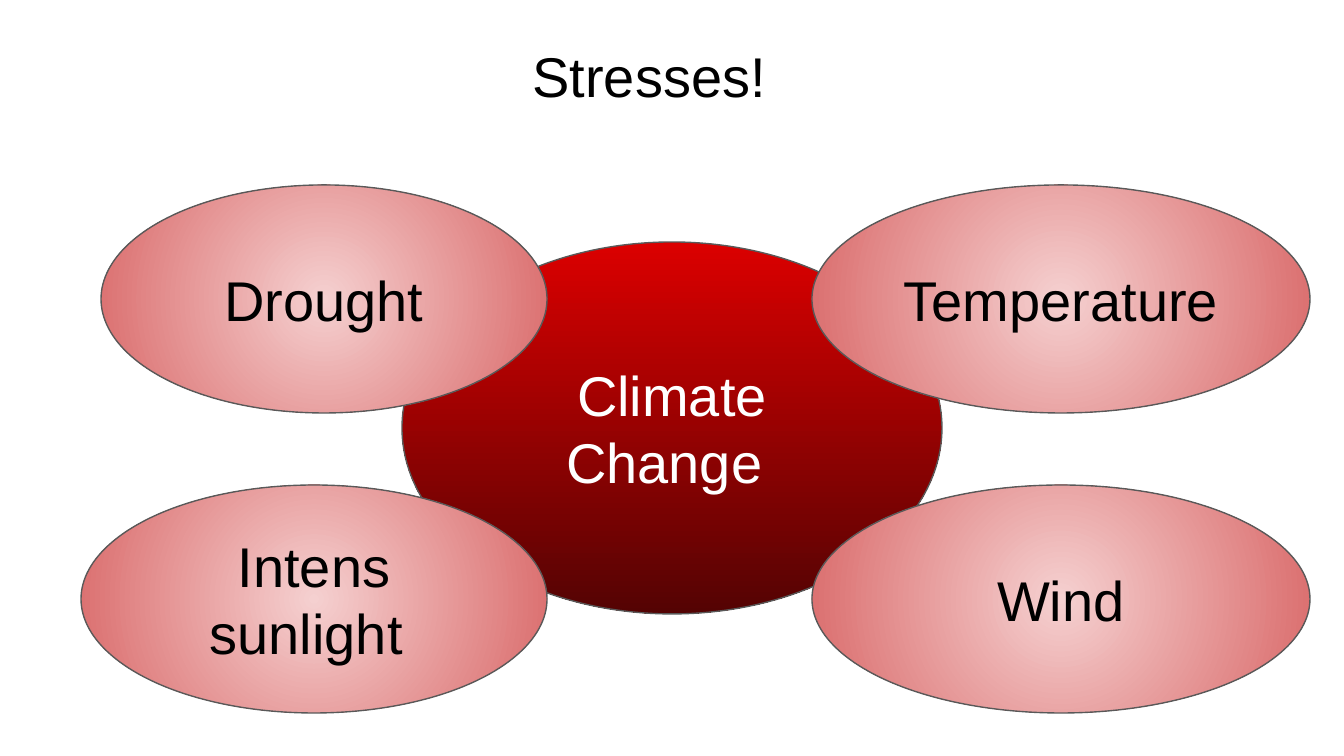
"""Build a slide of climate stresses around a central ellipse."""
from dataclasses import dataclass

from lxml import etree
from pptx import Presentation
from pptx import util as u
from pptx.dml.color import RGBColor
from pptx.enum import shapes, text
from pptx.oxml import ns

SCALE = 9144000 / 1344


def px(size):
    """Turn pixels into EMU."""
    return u.Emu(round(size * SCALE))


@dataclass(frozen=True)
class Theme:
    """Colours, font and sizes of the slide."""
    font: str = "Arial"
    size: int = 30
    line: str = "595959"
    dark: str = "000000"
    light: str = "FFFFFF"
    core: tuple = ("DB0000", "540303")
    petal: tuple = ("F5D0D0", "D96868")


class Board:
    """Draws styled elements on one slide."""

    def __init__(self, slide, theme):
        """Keep the slide and its theme."""
        self.slide, self.theme = slide, theme

    def label(self, shape, lines, color, anchor):
        """Fill a shape with centred text."""
        frame = shape.text_frame
        frame.text = "\n".join(lines)
        frame.word_wrap = True
        frame.auto_size = text.MSO_AUTO_SIZE.NONE
        frame.vertical_anchor = anchor
        frame.margin_left = frame.margin_right = u.Inches(0.1)
        frame.margin_top = frame.margin_bottom = u.Inches(0.1)
        for para in frame.paragraphs:
            para.alignment = text.PP_ALIGN.CENTER
            para.font.name = self.theme.font
            para.font.size = u.Pt(self.theme.size)
            para.font.color.rgb = RGBColor.from_string(color)

    def title(self, box, words):
        """Place and format the title."""
        shape = self.slide.shapes.title
        shape.left, shape.top, shape.width, shape.height = map(px, box)
        self.label(shape, [words], self.theme.dark, text.MSO_ANCHOR.TOP)

    def oval(self, box, lines, stops, color, radial=False):
        """Add an ellipse with a linear or radial gradient."""
        shape = self.slide.shapes.add_shape(
            shapes.MSO_SHAPE.OVAL, *map(px, box))
        shape.shadow.inherit = False
        shape.line.color.rgb = RGBColor.from_string(self.theme.line)
        shape.line.width = u.Pt(0.75)
        shape.fill.gradient()
        shape.fill.gradient_angle = 270
        for stop, shade in zip(shape.fill.gradient_stops, stops):
            stop.color.rgb = RGBColor.from_string(shade)
        if radial:
            self.spread(shape)
        self.label(shape, lines, color, text.MSO_ANCHOR.MIDDLE)

    def spread(self, shape):
        """Make a gradient spread from the centre."""
        grad = shape._element.spPr.find(ns.qn("a:gradFill"))
        lin = grad.find(ns.qn("a:lin"))
        ring = etree.Element(ns.qn("a:path"), {"path": "circle"})
        etree.SubElement(ring, ns.qn("a:fillToRect"),
                         dict.fromkeys("ltrb", "50000"))
        grad.replace(lin, ring)


def main():
    """Build and save the slide."""
    deck = Presentation()
    deck.slide_width, deck.slide_height = px(1344), px(756)
    theme = Theme()
    board = Board(deck.slides.add_slide(deck.slide_layouts[5]), theme)
    board.oval((402, 242, 540, 372), ["Climate Change "],
               theme.core, theme.light)
    upper, lower, height = 185, 485, 228
    for left, top, width, lines in (
            (101, upper, 446, ["Drought"]),
            (812, upper, 498, ["Temperature "]),
            (81, lower, 466, ["Intens", "sunlight "]),
            (812, lower, 498, ["Wind"])):
        board.oval((left, top, width, height), lines,
                   theme.petal, theme.dark, radial=True)
    board.title((461, 28, 392, 121), "Stresses! ")
    deck.save("out.pptx")


if __name__ == "__main__":
    main()
